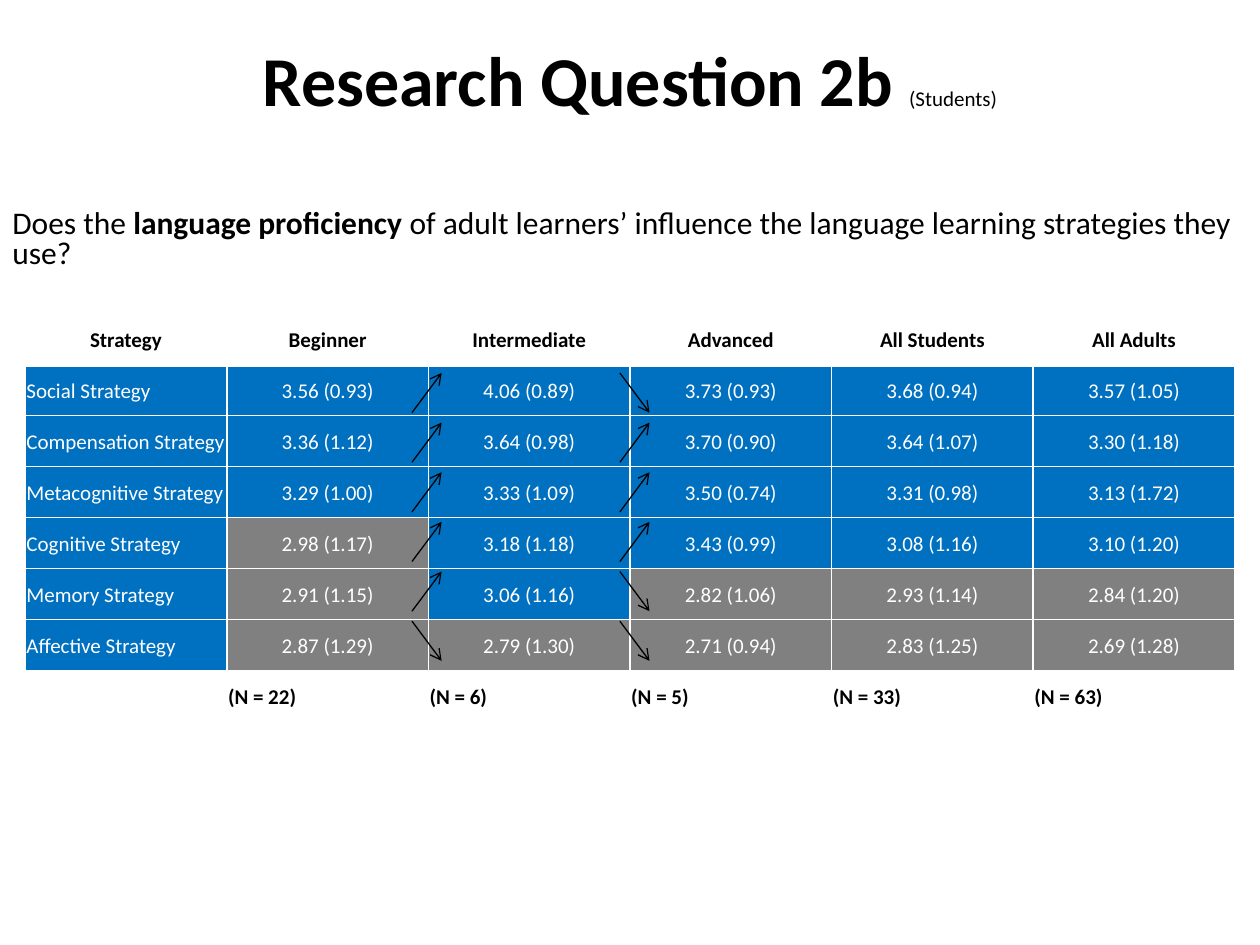
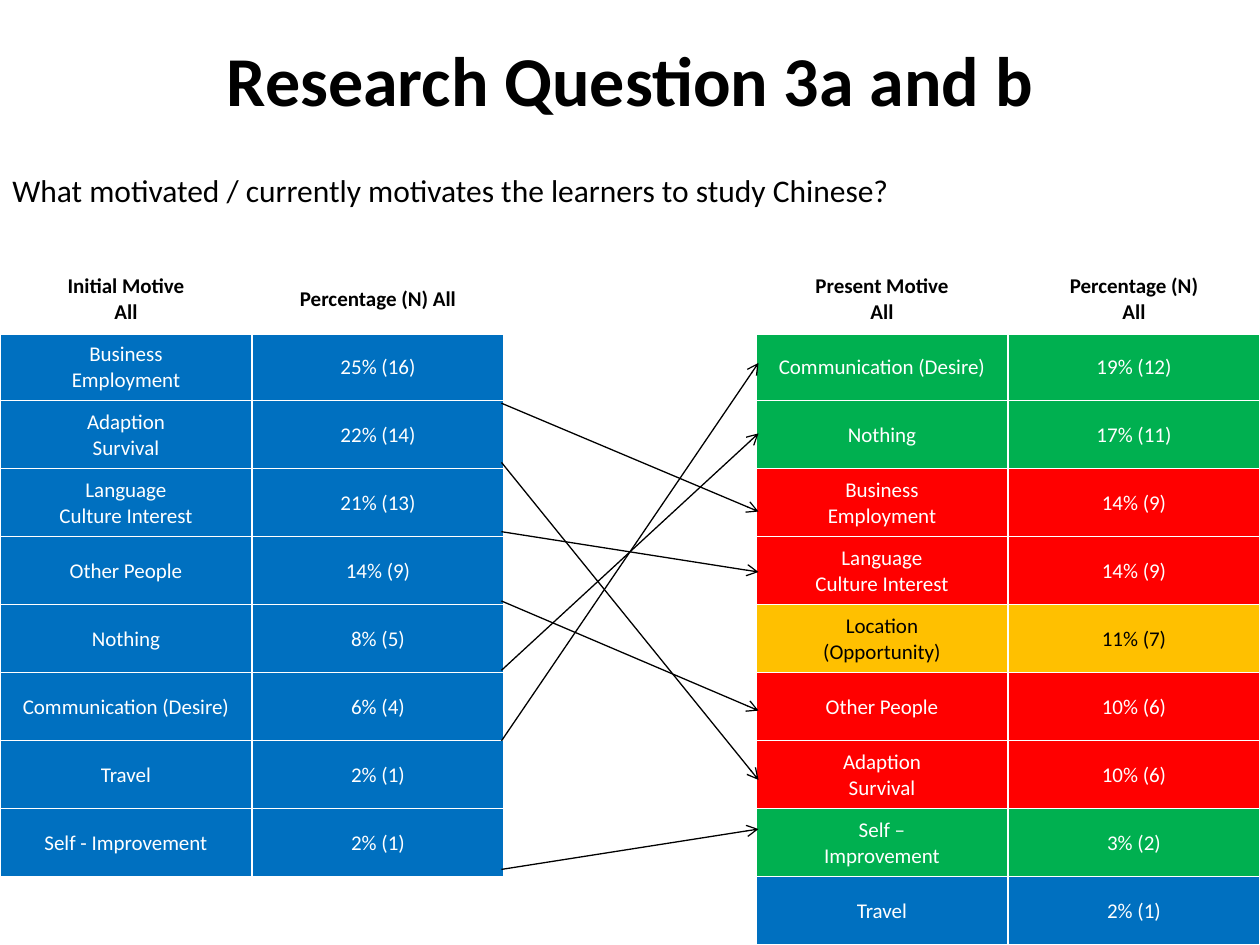
import pptx
import pptx.dml.color
import pptx.enum.shapes
import pptx.enum.text
import pptx.oxml.ns
import pptx.util
from lxml import etree

RGB = pptx.dml.color.RGBColor
Inches, Pt = pptx.util.Inches, pptx.util.Pt
ALIGN, ANCHOR = pptx.enum.text.PP_ALIGN, pptx.enum.text.MSO_ANCHOR
qn = pptx.oxml.ns.qn

BLACK, WHITE = RGB(0, 0, 0), RGB(255, 255, 255)
BLUE, GREY = RGB(0x00, 0x70, 0xC0), RGB(0x80, 0x80, 0x80)
GREEN, RED, AMBER = RGB(0x00, 0xB0, 0x50), RGB(0xFF, 0, 0), RGB(0xFF, 0xC0, 0)
FONT = "Calibri"
W, H = 10, 7.5

# Slide 1: mean and standard deviation of each strategy by level
LEVELS = ["Strategy", "Beginner", "Intermediate", "Advanced", "All Students", "All Adults"]
STRATEGIES = [
    ("Social Strategy", "3.56 (0.93)", "4.06 (0.89)", "3.73 (0.93)", "3.68 (0.94)", "3.57 (1.05)"),
    ("Compensation Strategy", "3.36 (1.12)", "3.64 (0.98)", "3.70 (0.90)", "3.64 (1.07)", "3.30 (1.18)"),
    ("Metacognitive Strategy", "3.29 (1.00)", "3.33 (1.09)", "3.50 (0.74)", "3.31 (0.98)", "3.13 (1.72)"),
    ("Cognitive Strategy", "2.98 (1.17)", "3.18 (1.18)", "3.43 (0.99)", "3.08 (1.16)", "3.10 (1.20)"),
    ("Memory Strategy", "2.91 (1.15)", "3.06 (1.16)", "2.82 (1.06)", "2.93 (1.14)", "2.84 (1.20)"),
    ("Affective Strategy", "2.87 (1.29)", "2.79 (1.30)", "2.71 (0.94)", "2.83 (1.25)", "2.69 (1.28)"),
]
SAMPLES = ["", "(N = 22)", "(N = 6)", "(N = 5)", "(N = 33)", "(N = 63)"]
QUESTION_2B = [("Does the ", False), ("language proficiency ", True),
               ("of adult learners’ influence the language learning strategies they use?", False)]

# Slide 2: motive, share, and height at which its arrow starts or ends
MOTIVE_HEADS = ["Initial Motive\nAll", "Percentage (N) All", "", "Present Motive\nAll", "Percentage (N)\nAll"]
INITIAL = [
    ("Business\nEmployment", "25% (16)", 3.2),
    ("Adaption\nSurvival", "22% (14)", 3.67),
    ("Language\nCulture Interest", "21% (13)", 4.22),
    ("Other People", "14% (9)", 4.77),
    ("Nothing", "8% (5)", 5.32),
    ("Communication (Desire)", "6% (4)", 5.88),
    ("Travel", "2% (1)", None),
    ("Self - Improvement", "2% (1)", 6.9),
]
PRESENT = [
    ("Communication (Desire)", "19% (12)", 2.88),
    ("Nothing", "17% (11)", 3.44),
    ("Business\nEmployment", "14% (9)", 4.06),
    ("Language\nCulture Interest", "14% (9)", 4.54),
    ("Location\n(Opportunity)", "11% (7)", None),
    ("Other People", "10% (6)", 5.64),
    ("Adaption\nSurvival", "10% (6)", 6.19),
    ("Self –\nImprovement", "3% (2)", 6.58),
    ("Travel", "2% (1)", None),
]
QUESTION_3 = [("What motivated / currently motivates the learners to study Chinese?", False)]


def style(r, size, color=BLACK, bold=False):
    r.font.name, r.font.size, r.font.bold = FONT, Pt(size), bold
    r.font.color.rgb = color


def new_slide(prs, title, note=""):
    s = prs.slides.add_slide(prs.slide_layouts[5])
    sp = s.shapes.title
    sp.left, sp.top, sp.width, sp.height = map(Inches, (W / 12, 0, W * 10 / 12, H / 6))
    tf = sp.text_frame
    tf.vertical_anchor = ANCHOR.MIDDLE
    p = tf.paragraphs[0]
    p.text = title
    p.alignment = ALIGN.CENTER
    style(p.runs[0], 40, bold=True)
    if note:
        r = p.add_run()
        r.text = note
        style(r, 12)
    return s


def add_question(s, top, parts, spacing=1.0):
    tf = s.shapes.add_textbox(0, Inches(top), Inches(W), Inches(0.66)).text_frame
    tf.word_wrap = True
    p = tf.paragraphs[0]
    p.line_spacing = spacing
    for text, bold in parts:
        r = p.add_run()
        r.text = text
        style(r, 18, bold=bold)


def fill_cell(cell, text, fill=WHITE, color=BLACK, bold=False, align=ALIGN.CENTER, bottom=1):
    cell.margin_left = cell.margin_right = cell.margin_top = Inches(0.01)
    cell.margin_bottom = 0
    cell.vertical_anchor = ANCHOR.MIDDLE
    # White cell borders go before the fill
    tc_pr = cell._tc.get_or_add_tcPr()
    for side, width in (("L", 1), ("R", 1), ("T", 1), ("B", bottom)):
        ln = etree.SubElement(tc_pr, qn("a:ln" + side), w=str(Pt(width)))
        etree.SubElement(etree.SubElement(ln, qn("a:solidFill")), qn("a:srgbClr"), val=str(WHITE))
    cell.fill.solid()
    cell.fill.fore_color.rgb = fill
    cell.text_frame.text = text
    for p in cell.text_frame.paragraphs:
        p.alignment = align
        p.font.size = Pt(12)
        for r in p.runs:
            style(r, 12, color, bold)


def add_grid(s, left, top, col_w, row_h, heads, n_rows):
    """Add an even table with its heading row filled in."""
    n_cols = len(heads)
    table = s.shapes.add_table(n_rows, n_cols, *map(Inches, (left, top, col_w * n_cols, row_h * n_rows))).table
    for col, head in zip(table.columns, heads):
        col.width = Inches(col_w)
    for row in table.rows:
        row.height = Inches(row_h)
    for c, head in enumerate(heads):
        fill_cell(table.cell(0, c), head, bold=True, bottom=3)
    return table


def add_arrow(s, x1, y1, x2, y2):
    cx = s.shapes.add_connector(pptx.enum.shapes.MSO_CONNECTOR.STRAIGHT, *map(Inches, (x1, y1, x2, y2)))
    cx.line.color.rgb = BLACK
    cx.line.width = Pt(0.75)
    etree.SubElement(cx.line._get_or_add_ln(), qn("a:tailEnd"), type="arrow")
    etree.SubElement(cx._element.spPr, qn("a:effectLst"))


def mean(score):
    return float(score.split()[0])


def percent(share):
    return int(share.split("%")[0])


def motive_key(label):
    return label.split()[0]


def strategy_slide(prs):
    s = new_slide(prs, "Research Question 2b ", "(Students)")
    table = add_grid(s, 0.2, 2.49, 1.6, 0.405, LEVELS, len(STRATEGIES) + 2)
    for i, (name, *scores) in enumerate(STRATEGIES):
        fill_cell(table.cell(i + 1, 0), name, BLUE, WHITE, align=ALIGN.LEFT)
        for c, score in enumerate(scores, 1):
            fill_cell(table.cell(i + 1, c), score, BLUE if mean(score) >= 3 else GREY, WHITE)
    for c, sample in enumerate(SAMPLES):
        fill_cell(table.cell(len(STRATEGIES) + 1, c), sample, bold=True, align=ALIGN.LEFT)
    add_question(s, 1.62, QUESTION_2B, 0.8)

    # Arrows rise or fall with the mean from one level to the next
    for i, (name, *scores) in enumerate(STRATEGIES):
        high = 2.96 + 0.394 * i
        low = high + 0.315
        for x, before, after in ((3.27, *scores[:2]), (4.92, *scores[1:3])):
            y1, y2 = (low, high) if mean(after) > mean(before) else (high, low)
            add_arrow(s, x, y1, x + 0.235, y2)


def motive_slide(prs):
    s = new_slide(prs, "Research Question 3a and b")
    add_question(s, 1.31, QUESTION_3)
    table = add_grid(s, 0, 2.1, W / 5, 0.54, MOTIVE_HEADS, len(PRESENT) + 1)
    before = {motive_key(label): (percent(share), y) for label, share, y in INITIAL}

    for i, (label, share, y_end) in enumerate(PRESENT, 1):
        left = INITIAL[i - 1][:2] if i <= len(INITIAL) else ("", "")
        for c, text in enumerate(left):
            fill_cell(table.cell(i, c), text, BLUE if text else WHITE, WHITE)
        fill_cell(table.cell(i, 2), "")
        # Green grew, red shrank, blue stayed, amber is new
        old, y_start = before.get(motive_key(label), (None, None))
        now = percent(share)
        if old is None:
            fill = AMBER
        else:
            fill = GREEN if now > old else RED if now < old else BLUE
        for c, text in enumerate((label, share), 3):
            fill_cell(table.cell(i, c), text, fill, BLACK if fill == AMBER else WHITE)
        if y_end and y_start:
            add_arrow(s, 3.98, y_start, 6.02, y_end)


def main():
    prs = pptx.Presentation()
    prs.slide_width, prs.slide_height = Inches(W), Inches(H)
    strategy_slide(prs)
    motive_slide(prs)
    prs.save("out.pptx")


if __name__ == "__main__":
    main()
